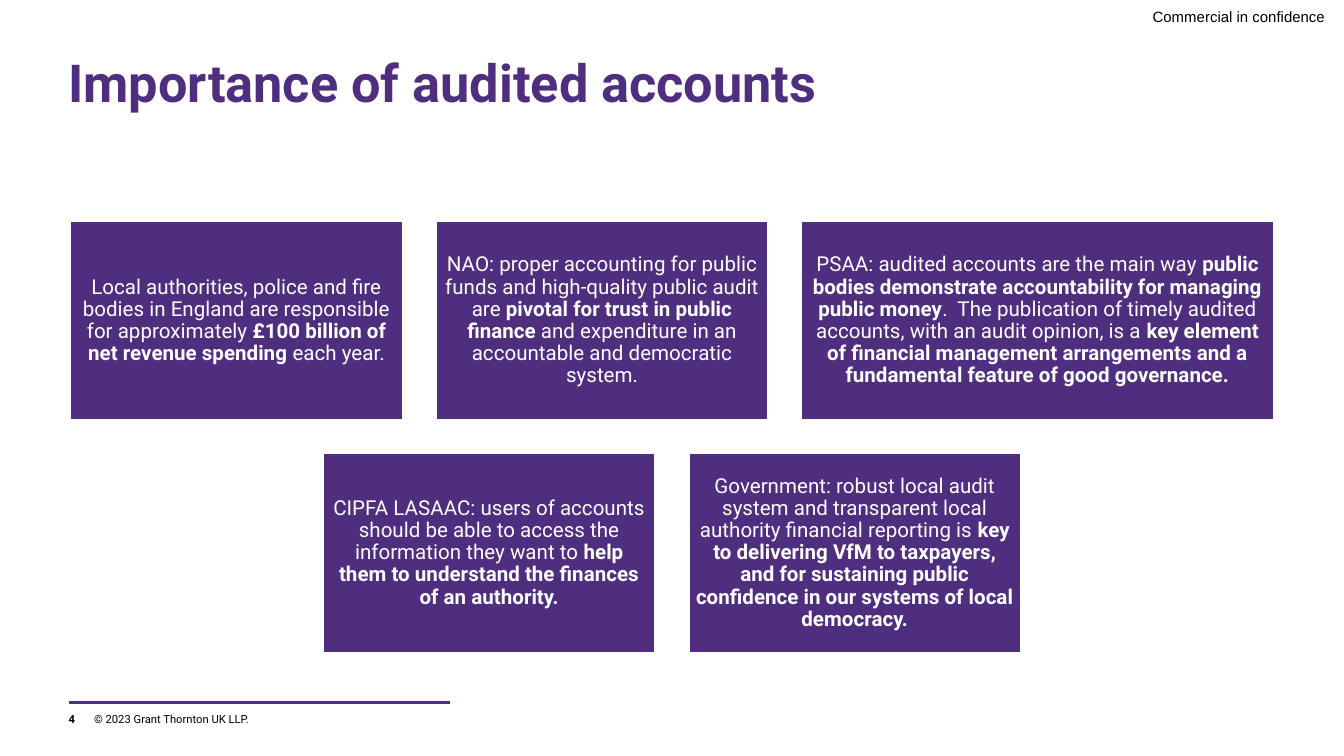
from dataclasses import dataclass

from pptx import Presentation
from pptx.dml.color import RGBColor
from pptx.enum.shapes import MSO_CONNECTOR, MSO_SHAPE
from pptx.enum.text import MSO_ANCHOR, PP_ALIGN
from pptx.oxml.ns import qn
from pptx.slide import Slide
from pptx.text.text import TextFrame
from pptx.util import Inches, Pt
from lxml.etree import SubElement

PURPLE = RGBColor(0x4F, 0x2D, 0x7F)
WHITE = RGBColor(0xFF, 0xFF, 0xFF)
BLACK = RGBColor(0, 0, 0)
PAGE_WIDTH = 10
PAGE_HEIGHT = PAGE_WIDTH * 9 / 16
CARD_HEIGHT = 1.49
CARD_GAP = 0.24
FIRST_ROW_TOP = 1.64


@dataclass(frozen=True)
class Span:
    text: str
    bold: bool = False


@dataclass(frozen=True)
class Card:
    spans: tuple[Span, ...]
    width: float = 2.48


@dataclass(frozen=True)
class Label:
    text: str
    left: float
    top: float
    width: float
    height: float
    size: float
    color: RGBColor = BLACK
    bold: bool = False
    font: str = "Roboto"
    align: PP_ALIGN = PP_ALIGN.LEFT
    anchor: MSO_ANCHOR = MSO_ANCHOR.TOP
    line_spacing: float = 1.0


LABELS = (
    Label("Importance of audited accounts", 0.51, 0.43, 8.98, 0.87, 28,
          PURPLE, bold=True, line_spacing=0.9),
    Label("Commercial in confidence", 8.44, 0, 1.42, 0.24, 8, font="Arial",
          align=PP_ALIGN.RIGHT, anchor=MSO_ANCHOR.MIDDLE),
    Label("4", 0.51, 5.3, 0.18, 0.1, 6, bold=True),
    Label("© 2023 Grant Thornton UK LLP.", 0.7, 5.3, 4.31, 0.1, 6),
)

CARD_ROWS = (
    (
        Card((
            Span("Local authorities, police and fire bodies in England are "
                 "responsible for approximately "),
            Span("£100 billion of net revenue spending ", True),
            Span("each year."),
        )),
        Card((
            Span("NAO: proper accounting for public funds and high-quality "
                 "public audit are "),
            Span("pivotal for trust in public finance", True),
            Span(" and expenditure in an accountable and democratic system."),
        )),
        Card((
            Span("PSAA: audited accounts are the main way "),
            Span("public bodies demonstrate accountability for managing "
                 "public money", True),
            Span(".  The publication of timely audited accounts, with an "
                 "audit opinion, is a "),
            Span("key element of financial management arrangements and a "
                 "fundamental feature of good governance.", True),
        ), width=3.52),
    ),
    (
        Card((
            Span("CIPFA LASAAC: users of accounts should be able to access "
                 "the information they want to "),
            Span("help them to understand the finances of an authority.", True),
        )),
        Card((
            Span("Government: robust local audit system and transparent local "
                 "authority financial reporting is "),
            Span("key to delivering VfM to taxpayers, and for sustaining "
                 "public confidence in our systems of local democracy.", True),
        )),
    ),
)


def set_frame(frame: TextFrame, inset: float, anchor: MSO_ANCHOR) -> None:
    frame.word_wrap = True
    frame.vertical_anchor = anchor
    frame.margin_left = frame.margin_right = Inches(inset)
    frame.margin_top = frame.margin_bottom = Inches(inset)


def add_label(page: Slide, label: Label) -> None:
    box = page.shapes.add_textbox(Inches(label.left), Inches(label.top),
                                  Inches(label.width), Inches(label.height))
    set_frame(box.text_frame, 0, label.anchor)
    para = box.text_frame.paragraphs[0]
    para.text = label.text
    para.alignment = label.align
    para.line_spacing = label.line_spacing
    para.font.name = label.font
    para.font.size = Pt(label.size)
    para.font.bold = label.bold
    para.font.color.rgb = label.color


def add_card(page: Slide, card: Card, left: float, top: float) -> None:
    box = page.shapes.add_shape(MSO_SHAPE.RECTANGLE, Inches(left), Inches(top),
                                Inches(card.width), Inches(CARD_HEIGHT))
    box.shadow.inherit = False
    box.fill.solid()
    box.fill.fore_color.rgb = PURPLE
    box.line.color.rgb = WHITE
    box.line.width = Pt(1.5)
    set_frame(box.text_frame, 0.05, MSO_ANCHOR.MIDDLE)
    para = box.text_frame.paragraphs[0]
    para.alignment = PP_ALIGN.CENTER
    para.line_spacing = 0.9
    para.font.name = "Roboto"
    para.font.size = Pt(11)
    para.font.color.rgb = WHITE
    for span in card.spans:
        run = para.add_run()
        run.text = span.text
        run.font.bold = span.bold


def add_card_row(page: Slide, cards: tuple[Card, ...], top: float) -> None:
    row_width = sum(card.width for card in cards) + CARD_GAP * (len(cards) - 1)
    left = (PAGE_WIDTH - row_width) / 2
    for card in cards:
        add_card(page, card, left, top)
        left += card.width + CARD_GAP


def add_footer_rule(page: Slide) -> None:
    rule = page.shapes.add_connector(MSO_CONNECTOR.STRAIGHT, Inches(0.51),
                                     Inches(5.23), Inches(3.35), Inches(5.23))
    rule.line.color.rgb = PURPLE
    rule.line.width = Pt(1.5)
    SubElement(rule._element.spPr, qn("a:effectLst"))


def main() -> None:
    deck = Presentation()
    deck.slide_width = Inches(PAGE_WIDTH)
    deck.slide_height = Inches(PAGE_HEIGHT)
    page = deck.slides.add_slide(deck.slide_layouts[6])
    add_footer_rule(page)
    for label in LABELS:
        add_label(page, label)
    for index, cards in enumerate(CARD_ROWS):
        add_card_row(page, cards, FIRST_ROW_TOP + index * (CARD_HEIGHT + CARD_GAP))
    deck.save("out.pptx")


if __name__ == "__main__":
    main()
